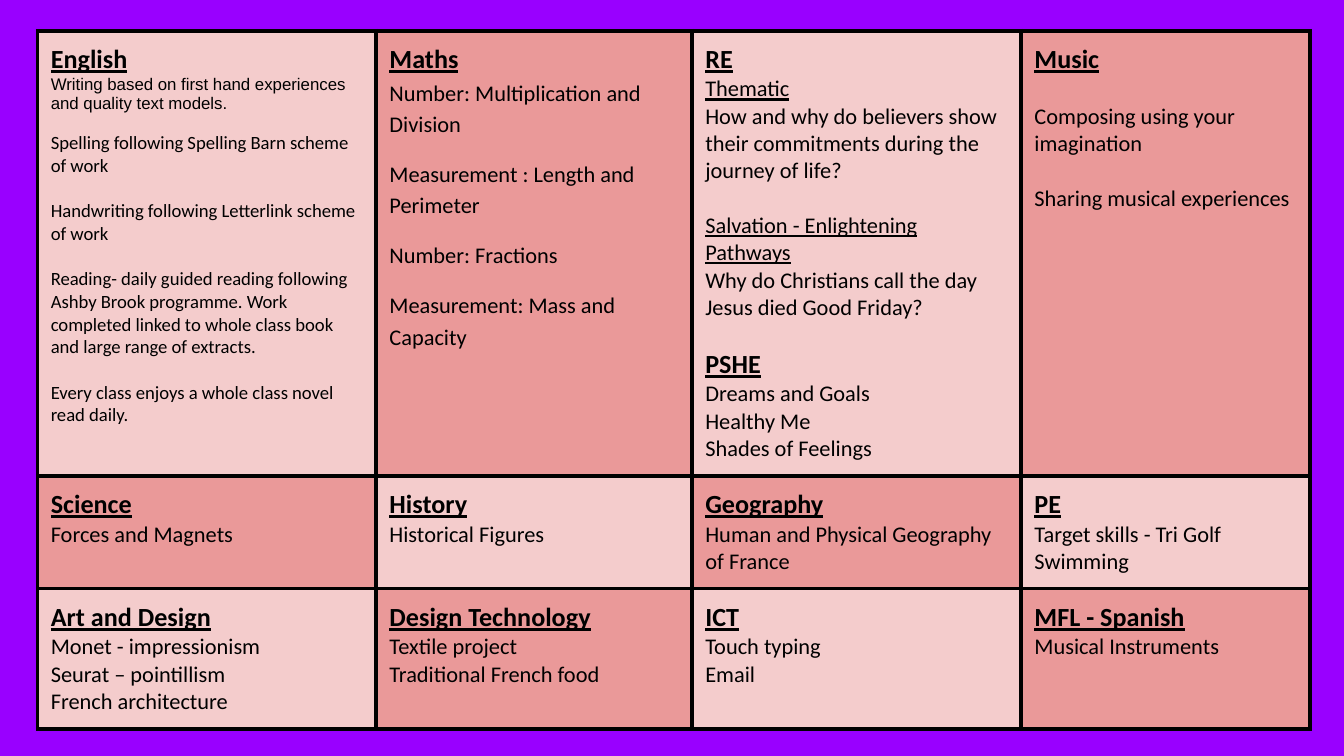
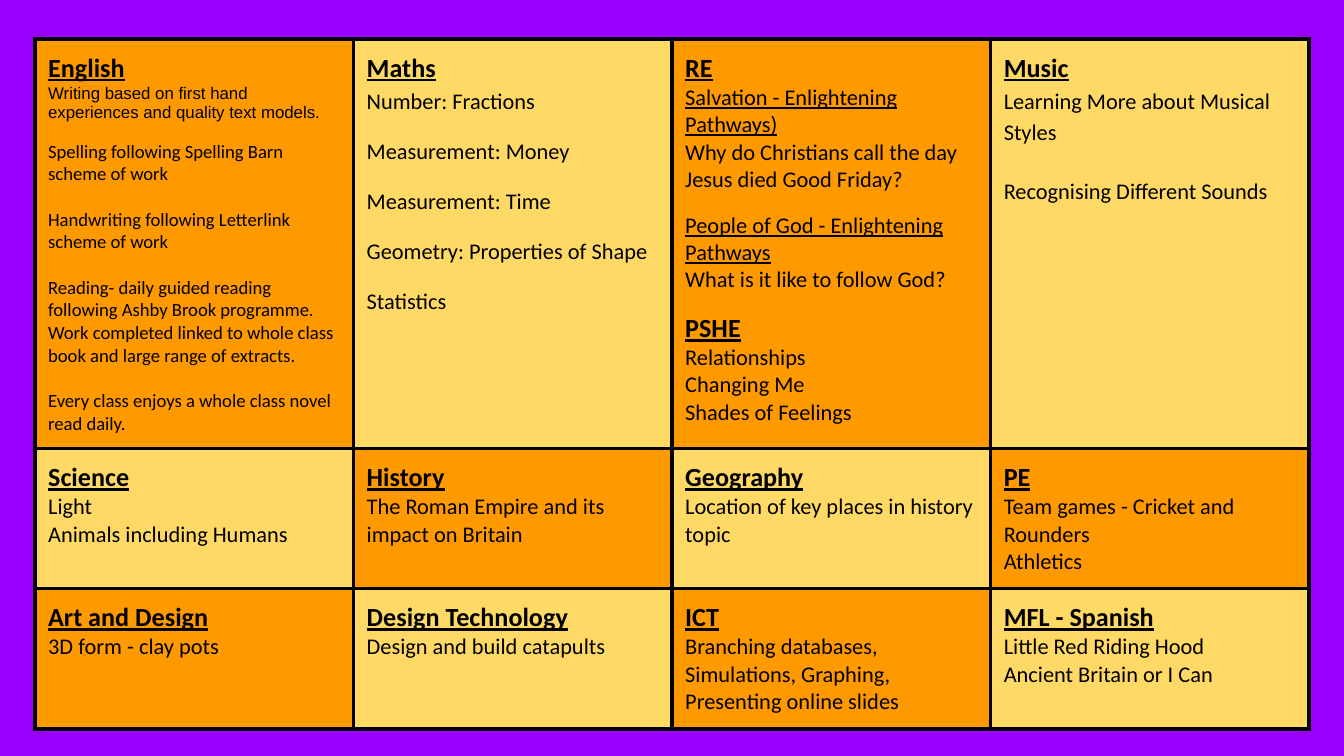
from dataclasses import dataclass, field

from lxml import etree
from pptx import Presentation
from pptx import util as u
from pptx.dml.color import RGBColor
from pptx.enum import text
from pptx.oxml.ns import qn


@dataclass(frozen=True)
class Theme:
    background: str = "9900FF"
    ink: str = "000000"
    pinks: tuple[str, str] = ("F4CCCC", "EA9999")
    oranges: tuple[str, str] = ("FF9900", "FFD966")
    border: float = 2.25
    inset: float = 0.25
    fonts: dict[str, dict] = field(default_factory=lambda: {
        "heading": dict(name="Calibri", size=u.Pt(14), bold=True, underline=True),
        "topic": dict(name="Calibri", size=u.Pt(12), bold=False, underline=True),
        "body": dict(name="Calibri", size=u.Pt(12), bold=False, underline=False),
        "small": dict(name="Calibri", size=u.Pt(10), bold=False, underline=False),
        "intro": dict(name="Arial", size=u.Pt(9), bold=False, underline=False),
    })


THEME = Theme()
SMALL_GAP, LIST_GAP, BODY_GAP = 12.2, 10, 14.65  # points above a paragraph


@dataclass(frozen=True)
class Line:
    text: str
    style: str = "body"
    gap: float = 0
    spacing: float = 1.0


@dataclass(frozen=True)
class Subject:
    name: str
    lines: list[Line]


@dataclass(frozen=True)
class Plan:
    """One slide: a grid of subjects, with lengths in centimetres."""
    left: float
    top: float
    columns: list[float]
    rows: list[float]
    fills: tuple[str, str]
    grid: list[list[Subject]]


def subject(name: str, *lines: str | Line) -> Subject:
    return Subject(name, [Line(ln) if isinstance(ln, str) else ln for ln in lines])


def maths(*units: str) -> Subject:
    return Subject("Maths", [Line(unit, gap=LIST_GAP if i else 0, spacing=1.15)
                             for i, unit in enumerate(units)])


ENGLISH = subject(
    "English",
    Line("Writing based on first hand experiences and quality text models.", "intro"),
    Line("Spelling following Spelling Barn scheme of work", "small", LIST_GAP),
    Line("Handwriting following Letterlink scheme of work", "small", SMALL_GAP),
    Line("Reading- daily guided reading following Ashby Brook programme. Work "
         "completed linked to whole class book and large range of extracts.",
         "small", SMALL_GAP),
    Line("Every class enjoys a whole class novel read daily.", "small", SMALL_GAP),
)
GOOD_FRIDAY = "Why do Christians call the day Jesus died Good Friday?"
RE_SCHEME = "Enlightening Pathways"
FEELINGS_SCHEME = "Shades of Feelings"

PLANS = [
    Plan(0.71, 0.58, [6.4, 5.97, 6.22, 5.46], [8.36, 2.11, 2.11], THEME.pinks, [
        [
            ENGLISH,
            maths("Number: Multiplication and Division",
                  "Measurement : Length and Perimeter",
                  "Number: Fractions",
                  "Measurement: Mass and Capacity"),
            subject("RE",
                    Line("Thematic", "topic"),
                    "How and why do believers show their commitments during the "
                    "journey of life?",
                    Line(f"Salvation - {RE_SCHEME}", "topic", BODY_GAP),
                    GOOD_FRIDAY,
                    Line("PSHE", "heading", BODY_GAP),
                    "Dreams and Goals", "Healthy Me", FEELINGS_SCHEME),
            subject("Music",
                    Line("Composing using your imagination", gap=BODY_GAP),
                    Line("Sharing musical experiences", gap=BODY_GAP)),
        ],
        [
            subject("Science", "Forces and Magnets"),
            subject("History", "Historical Figures"),
            subject("Geography", "Human and Physical Geography of France"),
            subject("PE", "Target skills - Tri Golf", "Swimming"),
        ],
        [
            subject("Art and Design", "Monet - impressionism",
                    "Seurat – pointillism", "French architecture"),
            subject("Design Technology", "Textile project", "Traditional French food"),
            subject("ICT", "Touch typing", "Email"),
            subject("MFL - Spanish", "Musical Instruments"),
        ],
    ]),
    Plan(0.66, 0.74, [6.02] * 4, [7.52, 2.11, 2.11], THEME.oranges, [
        [
            ENGLISH,
            maths("Number: Fractions", "Measurement: Money", "Measurement: Time",
                  "Geometry: Properties of Shape", "Statistics"),
            subject("RE",
                    Line(f"Salvation - {RE_SCHEME})", "topic"),
                    GOOD_FRIDAY,
                    Line(f"People of God - {RE_SCHEME}", "topic", LIST_GAP),
                    "What is it like to follow God?",
                    Line("PSHE", "heading", LIST_GAP),
                    "Relationships", "Changing Me", FEELINGS_SCHEME),
            subject("Music",
                    Line("Learning More about Musical Styles", spacing=1.15),
                    Line("Recognising Different Sounds", gap=BODY_GAP, spacing=1.15)),
        ],
        [
            subject("Science", "Light", "Animals including Humans"),
            subject("History", "The Roman Empire and its impact on Britain"),
            subject("Geography", "Location of key places in history topic"),
            subject("PE", "Team games - Cricket and Rounders", "Athletics"),
        ],
        [
            subject("Art and Design", "3D form - clay pots"),
            subject("Design Technology", "Design and build catapults"),
            subject("ICT", "Branching databases, Simulations, Graphing,",
                    "Presenting online slides"),
            subject("MFL - Spanish", "Little Red Riding Hood", "Ancient Britain or I Can"),
        ],
    ]),
]


def set_borders(cell) -> None:
    """Outline all four sides; borders must precede the fill in the XML."""
    tc_pr = cell._tc.get_or_add_tcPr()
    for i, side in enumerate(("a:lnL", "a:lnR", "a:lnT", "a:lnB")):
        ln = etree.Element(qn(side), w=str(int(u.Pt(THEME.border))))
        fill = etree.SubElement(ln, qn("a:solidFill"))
        etree.SubElement(fill, qn("a:srgbClr"), val=THEME.ink)
        tc_pr.insert(i, ln)


def write_line(p, line: Line) -> None:
    layout = dict(alignment=text.PP_ALIGN.LEFT, line_spacing=line.spacing,
                  space_before=u.Pt(line.gap), space_after=u.Pt(0))
    for key, value in layout.items():
        setattr(p, key, value)
    r = p.add_run()
    r.text = line.text
    for key, value in THEME.fonts[line.style].items():
        setattr(r.font, key, value)
    r.font.color.rgb = RGBColor.from_string(THEME.ink)


def fill_cell(cell, subj: Subject, color: str) -> None:
    cell.fill.solid()
    cell.fill.fore_color.rgb = RGBColor.from_string(color)
    set_borders(cell)
    for side in ("left", "right", "top", "bottom"):
        setattr(cell, f"margin_{side}", u.Cm(THEME.inset))
    cell.vertical_anchor = text.MSO_ANCHOR.TOP
    tf = cell.text_frame
    write_line(tf.paragraphs[0], Line(subj.name, "heading"))
    for line in subj.lines:
        write_line(tf.add_paragraph(), line)


def add_plan(prs, plan: Plan) -> None:
    s = prs.slides.add_slide(prs.slide_layouts[6])
    s.background.fill.solid()
    s.background.fill.fore_color.rgb = RGBColor.from_string(THEME.background)
    table = s.shapes.add_table(
        len(plan.rows), len(plan.columns), u.Cm(plan.left), u.Cm(plan.top),
        u.Cm(sum(plan.columns)), u.Cm(sum(plan.rows))).table
    table.first_row = table.horz_banding = False
    for column, width in zip(table.columns, plan.columns):
        column.width = u.Cm(width)
    for row, height in zip(table.rows, plan.rows):
        row.height = u.Cm(height)
    for i, subjects in enumerate(plan.grid):
        for j, subj in enumerate(subjects):
            fill_cell(table.cell(i, j), subj, plan.fills[(i + j) % 2])


def main() -> None:
    prs = Presentation()
    prs.slide_width, prs.slide_height = u.Cm(25.4), u.Cm(14.29)
    for plan in PLANS:
        add_plan(prs, plan)
    prs.save("out.pptx")


if __name__ == "__main__":
    main()
